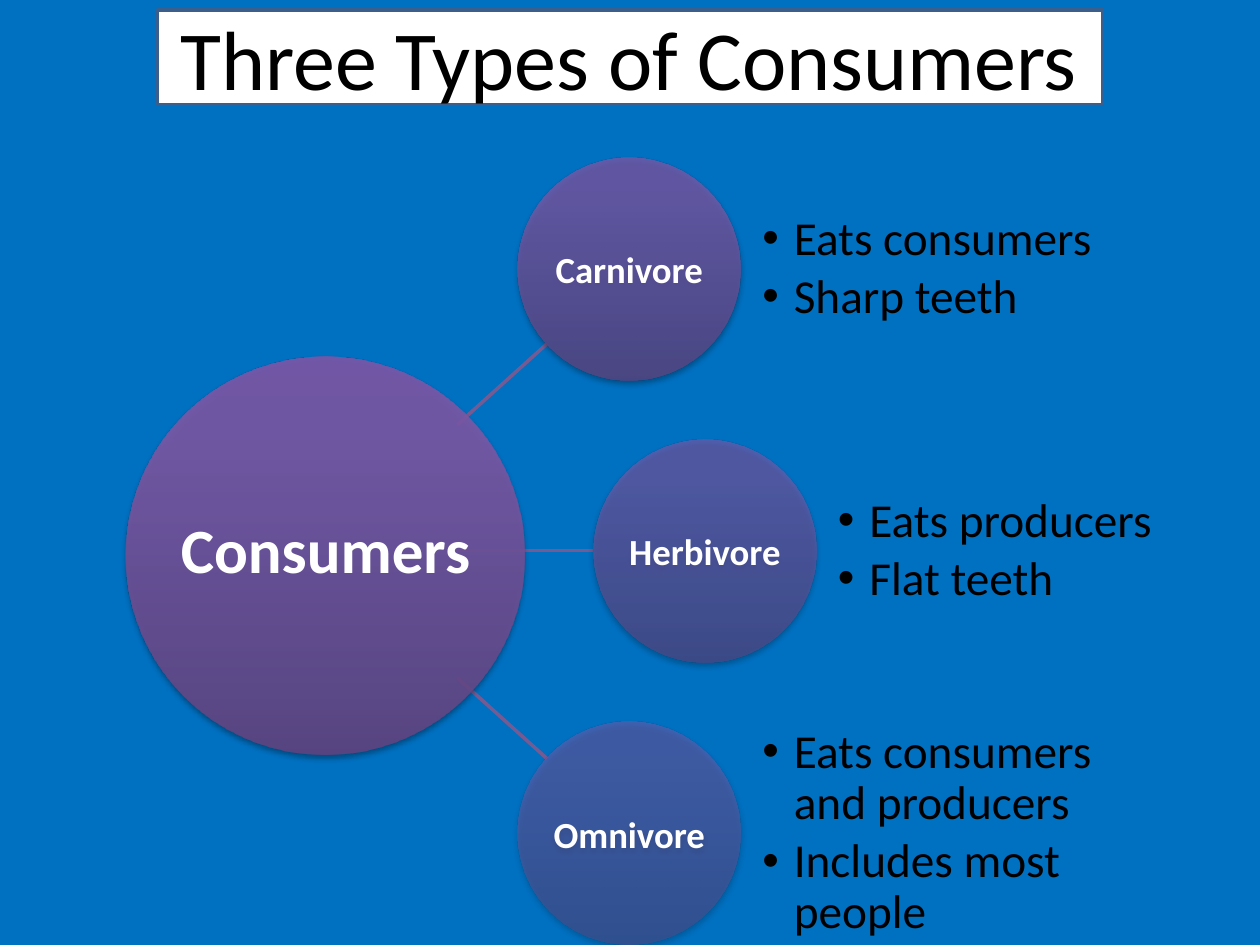
"""Build a slide that sorts consumers into three types."""
import pptx
import pptx.util
import pptx.dml.color
import pptx.enum.shapes
import pptx.enum.text
import pptx.oxml
import pptx.oxml.ns

Pt = pptx.util.Pt
MID = pptx.enum.text.MSO_ANCHOR.MIDDLE
FIT = pptx.enum.text.MSO_AUTO_SIZE.NONE
ALIGN = pptx.enum.text.PP_ALIGN
NS = pptx.oxml.ns.nsdecls("a")

deck = pptx.Presentation()
deck.slide_width = pptx.util.Inches(10)
deck.slide_height = pptx.util.Inches(7.5)
col, row = deck.slide_width / 100, deck.slide_height / 75


def grid(*spots):
    """Turn column and row pairs into slide lengths."""
    return [round(s * (row if i % 2 else col)) for i, s in enumerate(spots)]


def paint(fill, color):
    """Fill a background, shape, line or font with one colour."""
    fill.solid()
    fill.fore_color.rgb = pptx.dml.color.RGBColor.from_string(color)


slide = deck.slides.add_slide(deck.slide_layouts[4])
paint(slide.background.fill, "0070C0")
title, *lists, spare = slide.placeholders
spare.element.getparent().remove(spare.element)

title.left, title.top, title.width, title.height = grid(12.5, 0.8, 75, 7.5)
paint(title.fill, "FFFFFF")
paint(title.line.fill, "3A5F8C")
title.line.width = Pt(2)
frame = title.text_frame
frame.text = "Three Types of Consumers"
frame.auto_size, frame.vertical_anchor = FIT, MID
frame.margin_left, frame.margin_right = grid(1.8, 0)[0], 0
frame.margin_top = frame.margin_bottom = 0
head = frame.paragraphs[0]
head.alignment = ALIGN.LEFT
head.font.name, head.font.size = "Calibri", Pt(48)
paint(head.font.fill, "000000")

for start, end, stop in [(53.8, 43.4, 60.2), (43.7, 47.1, 43.7), (33.7, 43.4, 27.3)]:
    link = slide.shapes.add_connector(
        pptx.enum.shapes.MSO_CONNECTOR.STRAIGHT, *grid(36.3, start, end, stop))
    paint(link.line.fill, "745B93")
    link.line.width = Pt(2)
    link.element.spPr.append(pptx.oxml.parse_xml(f"<a:effectLst {NS}/>"))

size, step = 17.7, 22.4
kinds = [
    ("Carnivore", 41.1, 77, ["Eats consumers", "Sharp teeth"]),
    ("Herbivore", 47.1, 63, ["Eats producers", "Flat teeth"]),
    ("Omnivore", 41.1, 50, ["Eats consumers and producers", "Includes most people"]),
]
balls = [("", 10, 28.3, 31.6, 90)]
balls += [(name, x, 12.5 + i * step, size, alpha)
          for i, (name, x, alpha, _) in enumerate(kinds)]

for name, x, y, wide, alpha in balls:
    ball = slide.shapes.add_shape(
        pptx.enum.shapes.MSO_SHAPE.OVAL, *grid(x, y, wide, wide))
    ball.line.fill.background()
    ball.shadow.inherit = False
    stops = "".join(
        f'<a:gs pos="{at}000"><a:srgbClr val="{color}"><a:alpha val="{alpha}000"/>'
        "</a:srgbClr></a:gs>"
        for at, color in [(0, "5F4480"), (80, "7B58A6"), (100, "7C57A8")])
    props = ball.element.spPr
    props.find(pptx.oxml.ns.qn("a:prstGeom")).addnext(pptx.oxml.parse_xml(
        f'<a:gradFill {NS} rotWithShape="1"><a:gsLst>{stops}</a:gsLst>'
        '<a:lin ang="16200000" scaled="0"/></a:gradFill>'))
    props.find(pptx.oxml.ns.qn("a:effectLst")).append(pptx.oxml.parse_xml(
        f'<a:outerShdw {NS} blurRad="40000" dist="23000" dir="5400000" rotWithShape="0">'
        '<a:srgbClr val="000000"><a:alpha val="35000"/></a:srgbClr></a:outerShdw>'))
    if name:
        label, points = ball, 21
    else:
        label, points = slide.shapes.add_textbox(*grid(12.5, 40, 26.7, 7.1)), 36
        name = "Consumers"
    frame = label.text_frame
    frame.text = name
    frame.word_wrap, frame.vertical_anchor = False, MID
    frame.margin_left = frame.margin_right = 0
    text = frame.paragraphs[0]
    text.alignment = ALIGN.CENTER
    text.font.name, text.font.size, text.font.bold = "Calibri", Pt(points), True
    paint(text.font.fill, "FFFFFF")

for i, (body, (_, x, _, facts)) in enumerate(zip(lists, kinds)):
    body.left, body.top, body.width, body.height = grid(
        x + 19.4, 12.5 + i * step, 26.5, size)
    frame = body.text_frame
    frame.text = "\n".join(facts)
    frame.auto_size, frame.vertical_anchor, frame.word_wrap = FIT, MID, True
    frame.margin_left = frame.margin_right = 0
    frame.margin_top = frame.margin_bottom = 0
    for fact in frame.paragraphs:
        fact.alignment, fact.line_spacing = ALIGN.LEFT, 0.9
        fact.space_before, fact.space_after = Pt(0), Pt(4)
        fact.font.name, fact.font.size, fact.font.bold = "Calibri", Pt(27), False
        paint(fact.font.fill, "000000")
        props = fact._p.get_or_add_pPr()
        props.set("marL", str(grid(2.5)[0]))
        props.set("indent", str(grid(-2.5)[0]))
        for mark in ('buFont typeface="Arial"', 'buChar char="•"'):
            tag, rest = mark.split(" ", 1)
            props.insert_element_before(
                pptx.oxml.parse_xml(f"<a:{tag} {NS} {rest}/>"),
                "a:tabLst", "a:defRPr", "a:extLst")

deck.save("out.pptx")
